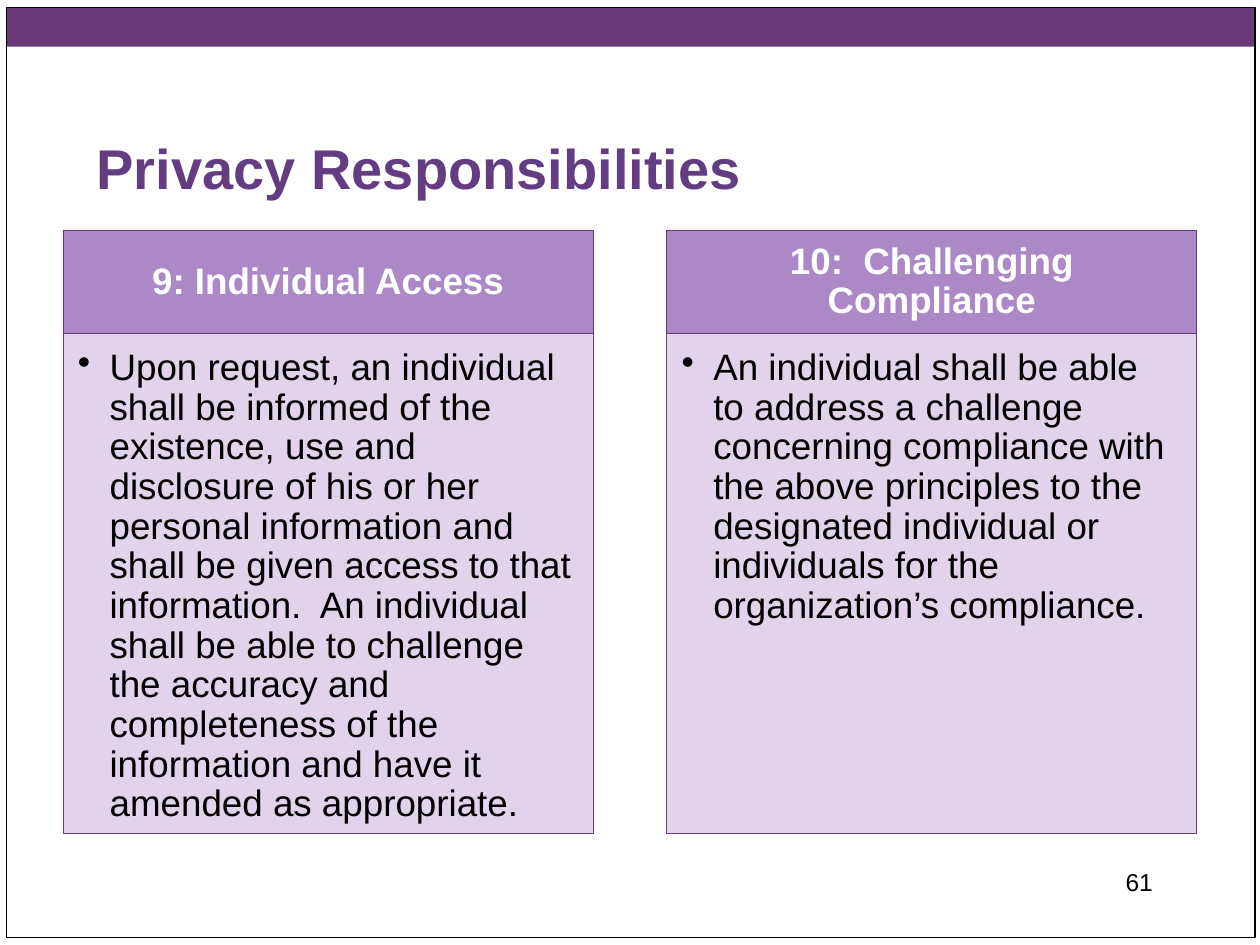
import lxml.etree
import pptx
import pptx.dml.color
import pptx.enum.shapes
import pptx.enum.text
import pptx.oxml.ns
import pptx.util

Cm = pptx.util.Cm
Pt = pptx.util.Pt
RGBColor = pptx.dml.color.RGBColor
ALIGN = pptx.enum.text.PP_ALIGN
ANCHOR = pptx.enum.text.MSO_ANCHOR
qn = pptx.oxml.ns.qn

PLUM = RGBColor(0x69, 0x3A, 0x77)
PURPLE = RGBColor(0x63, 0x3C, 0x82)
LILAC = RGBColor(0xA3, 0x7C, 0xC2)
PALE = RGBColor(0xE0, 0xD3, 0xEB)
BLACK = RGBColor(0, 0, 0)
WHITE = RGBColor(0xFF, 0xFF, 0xFF)

PRINCIPLES = [
    ("9: Individual Access",
     "Upon request, an individual shall be informed of the existence, use and "
     "disclosure of his or her personal information and shall be given access "
     "to that information.  An individual shall be able to challenge the "
     "accuracy and completeness of the information and have it amended as "
     "appropriate."),
    ("10:  Challenging Compliance",
     "An individual shall be able to address a challenge concerning compliance "
     "with the above principles to the designated individual or individuals "
     "for the organization’s compliance."),
]


def add_rect(s, left, top, width, height, fill=None, line=None, weight=0.5, alpha=None):
    sp = s.shapes.add_shape(pptx.enum.shapes.MSO_SHAPE.RECTANGLE,
                            Cm(left), Cm(top), Cm(width), Cm(height))
    sp.shadow.inherit = False
    if fill is None:
        sp.fill.background()
    else:
        sp.fill.solid()
        sp.fill.fore_color.rgb = fill
    if alpha is not None:
        clr = sp.fill._xPr.find(qn("a:solidFill"))[0]
        lxml.etree.SubElement(clr, qn("a:alpha"), val=str(alpha * 1000))
    if line is None:
        sp.line.fill.background()
    else:
        sp.line.color.rgb = line
        sp.line.width = Pt(weight)
    return sp


def set_text(sp, text, size=21, color=BLACK, bold=False, align=ALIGN.LEFT,
             anchor=ANCHOR.TOP, insets=(0.25, 0.13, 0.25, 0.13), spacing=None, bullet=False):
    tf = sp.text_frame
    tf.word_wrap = True
    tf.vertical_anchor = anchor
    tf.margin_left, tf.margin_top, tf.margin_right, tf.margin_bottom = map(Cm, insets)
    p = tf.paragraphs[0]
    p.alignment = align
    p.line_spacing = spacing
    if bullet:
        pPr = p._p.get_or_add_pPr()
        pPr.set("marL", str(Cm(0.64)))
        pPr.set("indent", str(-Cm(0.64)))
        lxml.etree.SubElement(pPr, qn("a:buChar"), char="•")
    r = p.add_run()
    r.text = text
    r.font.name = "Arial"
    r.font.size = Pt(size)
    r.font.bold = bold
    r.font.color.rgb = color


def add_label(s, left, top, width, height, text, **fmt):
    sp = s.shapes.add_textbox(Cm(left), Cm(top), Cm(width), Cm(height))
    set_text(sp, text, **fmt)


def add_principle(s, left, heading, body):
    top, width, head_height, body_height = 4.65, 10.69, 2.08, 10.08
    head = add_rect(s, left, top, width, head_height, LILAC, PURPLE, alpha=90)
    set_text(head, heading, color=WHITE, bold=True, align=ALIGN.CENTER,
             anchor=ANCHOR.MIDDLE, insets=(0.41, 0.23, 0.41, 0.23), spacing=0.9)
    panel = add_rect(s, left, top + head_height, width, body_height, PALE, PURPLE)
    set_text(panel, body, insets=(0.3, 0.3, 0.41, 0.46), spacing=0.9, bullet=True)


def main():
    """Build the privacy responsibilities slide."""
    prs = pptx.Presentation()
    prs.slide_width, prs.slide_height = Cm(25.4), Cm(19.05)
    s = prs.slides.add_slide(prs.slide_layouts[6])
    add_rect(s, 0.13, 0.15, 25.17, 0.79, fill=PLUM)
    add_rect(s, 0.13, 0.15, 25.17, 18.75, line=BLACK, weight=0.75)
    add_label(s, 1.7, 1.63, 21.59, 2.54, "Privacy Responsibilities",
              size=32, color=PURPLE, bold=True, anchor=ANCHOR.BOTTOM)
    for i, (heading, body) in enumerate(PRINCIPLES):
        add_principle(s, 1.27 + i * 12.17, heading, body)
    add_label(s, 18.21, 17.35, 5.28, 1.27, "61", size=14, align=ALIGN.RIGHT)
    prs.save("out.pptx")


if __name__ == "__main__":
    main()
